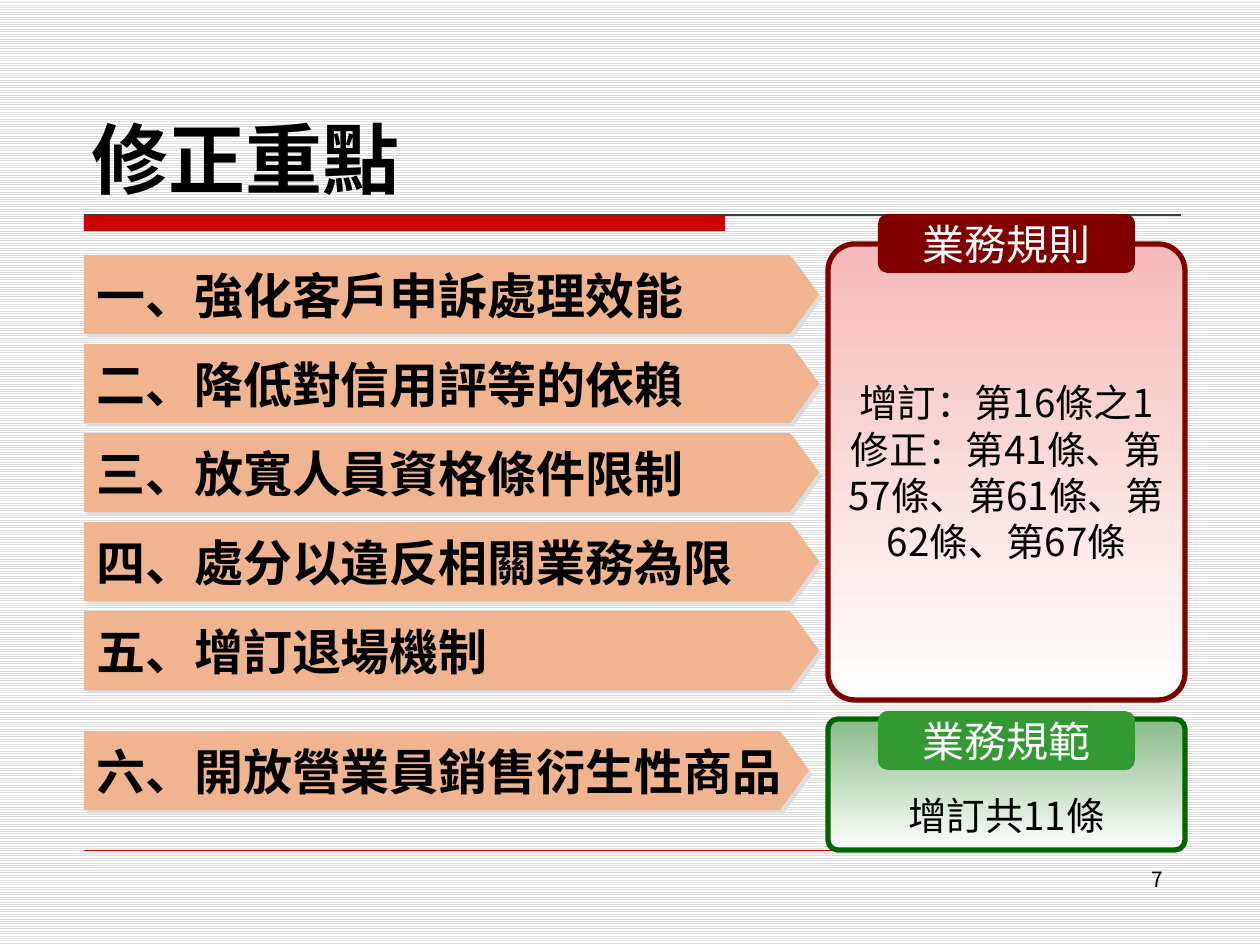
from lxml.etree import SubElement
from pptx import Presentation
from pptx.dml.color import RGBColor
from pptx.enum.dml import MSO_PATTERN
from pptx.enum.shapes import MSO_CONNECTOR, MSO_SHAPE
from pptx.enum.text import MSO_ANCHOR, PP_ALIGN
from pptx.oxml.ns import qn
from pptx.util import Pt

FONT = "Noto Sans CJK SC"
BLACK = RGBColor(0, 0, 0)
WHITE = RGBColor(255, 255, 255)
GRAY = RGBColor(0xDD, 0xDD, 0xDD)
DARK = RGBColor(0x33, 0x44, 0x3C)
RED = RGBColor(0xCC, 0, 0)
PEACH = RGBColor(0xF0, 0xB5, 0x90)
MAROON = RGBColor(0x80, 0, 0)
PINK = RGBColor(0xF6, 0xBA, 0xBA)
FOREST = RGBColor(0, 0x66, 0)
GREEN = RGBColor(0x33, 0x99, 0x33)
SAGE = RGBColor(0x88, 0xBA, 0x88)

TITLE = "修正重點"
PAGE = "7"
POINTS = [
    ("一、強化客戶申訴處理效能", 255, 735),
    ("二、降低對信用評等的依賴", 344, 735),
    ("三、放寬人員資格條件限制", 433, 735),
    ("四、處分以違反相關業務為限", 522, 735),
    ("五、增訂退場機制", 611, 735),
    ("六、開放營業員銷售衍生性商品", 731, 725),
]
PANELS = [
    dict(head="業務規則", tab=214, top=244, high=456, inset=6,
         body=["增訂：第16條之1", "修正：第41條、第57條、第61條、第62條、第67條"],
         tint=PINK, edge=MAROON, fill=MAROON),
    dict(head="業務規範", tab=711, top=719, high=131, inset=67,
         body=["增訂共11條"], tint=SAGE, edge=FOREST, fill=GREEN),
]


def px(n):
    return round(n * 914400 / 126)


def write(shape, lines, size=22, color=BLACK, bold=False, align=PP_ALIGN.LEFT,
          anchor=MSO_ANCHOR.MIDDLE, wrap=True, inset=6):
    frame = shape.text_frame
    frame.word_wrap = wrap
    frame.vertical_anchor = anchor
    frame.margin_top = px(inset)
    for i, line in enumerate(lines):
        para = frame.paragraphs[0] if i == 0 else frame.add_paragraph()
        para.alignment = align
        run = para.add_run()
        run.text = line
        font = run.font
        font.size, font.bold, font.name = Pt(size), bold, FONT
        font.color.rgb = color
        SubElement(font._element, qn("a:ea"), typeface=FONT)


def block(kind, x, y, w, h, fill, adj=None):
    shape = slide.shapes.add_shape(kind, px(x), px(y), px(w), px(h))
    shape.shadow.inherit = False
    shape.fill.solid()
    shape.fill.fore_color.rgb = fill
    shape.line.fill.background()
    if adj is not None:
        shape.adjustments[0] = adj
    return shape


def rule(x, y, end, color, width):
    line = slide.shapes.add_connector(
        MSO_CONNECTOR.STRAIGHT, px(x), px(y), px(end), px(y))
    line.line.color.rgb = color
    line.line.width = Pt(width)
    SubElement(line._element.spPr, qn("a:effectLst"))


def shade(shape):
    effect = shape._element.spPr.find(qn("a:effectLst"))
    outer = SubElement(effect, qn("a:outerShdw"), dist=str(Pt(2.8)),
                       dir="2700000", algn="ctr", rotWithShape="0")
    SubElement(outer, qn("a:srgbClr"), val=str(GRAY))


def label(x, y, w, h, text, **form):
    box = slide.shapes.add_textbox(px(x), px(y), px(w), px(h))
    write(box, [text], **form)


deck = Presentation()
deck.slide_width, deck.slide_height = px(1260), px(945)
slide = deck.slides.add_slide(deck.slide_layouts[6])
back = slide.background.fill
back.patterned()
back.pattern = MSO_PATTERN.LIGHT_HORIZONTAL
back.fore_color.rgb = GRAY
back.back_color.rgb = WHITE

rule(84, 215, 1181, DARK, 0.75)
block(MSO_SHAPE.RECTANGLE, 84, 215, 641, 16, RED)
rule(84, 850, 1176, RED, 0.25)
label(79, 42, 1102, 168, TITLE, size=44, bold=True, anchor=MSO_ANCHOR.BOTTOM)
label(903, 861, 273, 65, PAGE, size=12, align=PP_ALIGN.RIGHT,
      anchor=MSO_ANCHOR.TOP)

for text, top, wide in POINTS:
    arrow = block(MSO_SHAPE.PENTAGON, 84, top, wide, 79, PEACH, 0.367)
    shade(arrow)
    write(arrow, [text], size=28, bold=True, wrap=False)

for item in PANELS:
    panel = block(MSO_SHAPE.ROUNDED_RECTANGLE, 828, item["top"], 357,
                  item["high"], WHITE, 0.075)
    panel.fill.gradient()
    panel.fill.gradient_angle = 270
    for stop, color in zip(panel.fill.gradient_stops, (item["tint"], WHITE)):
        stop.color.rgb = color
    panel.line.color.rgb = item["edge"]
    panel.line.width = Pt(3)
    write(panel, item["body"], align=PP_ALIGN.CENTER, inset=item["inset"])
    tab = block(MSO_SHAPE.ROUNDED_RECTANGLE, 878, item["tab"], 257, 59,
                item["fill"], 0.167)
    write(tab, [item["head"]], size=24, color=WHITE, align=PP_ALIGN.CENTER,
          wrap=False)

deck.save("out.pptx")
